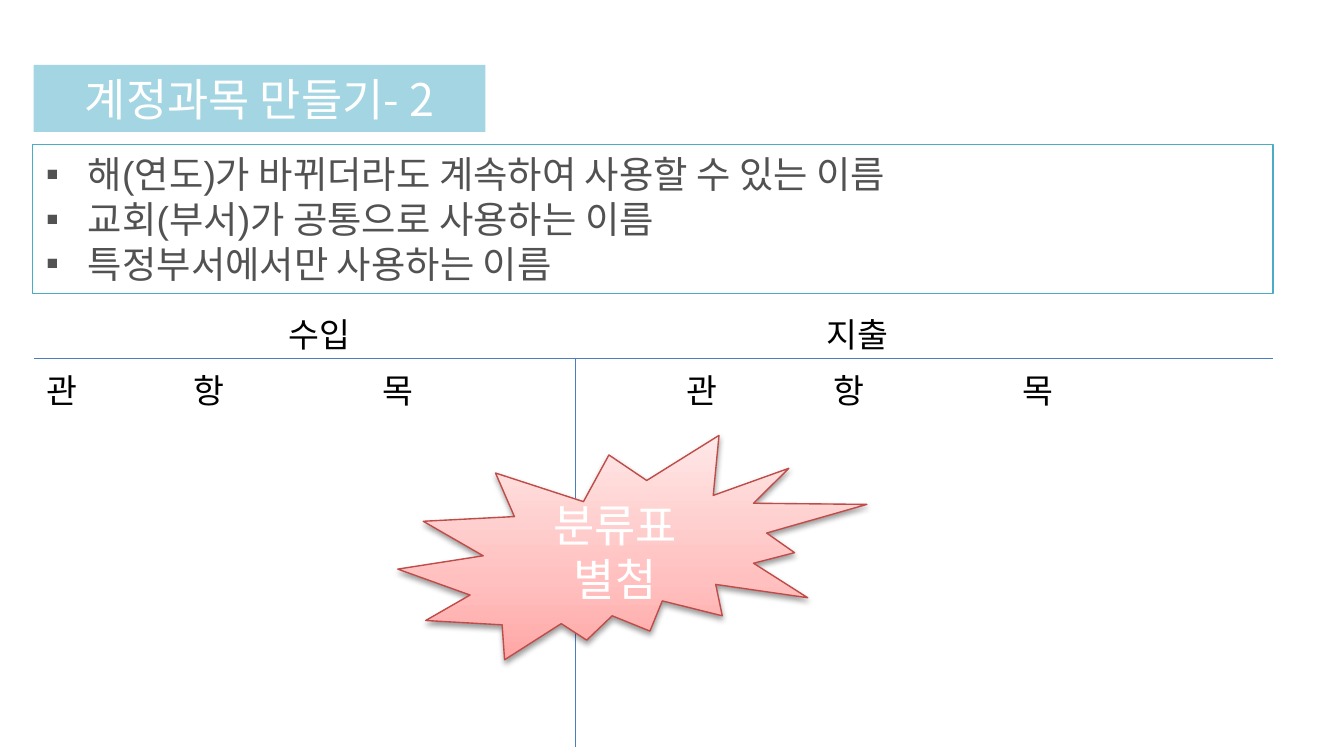
from lxml import etree
from pptx import Presentation
from pptx.dml.color import RGBColor
from pptx.enum.shapes import MSO_CONNECTOR, MSO_SHAPE
from pptx.enum.text import MSO_ANCHOR, MSO_AUTO_SIZE, PP_ALIGN
from pptx.oxml import parse_xml
from pptx.oxml.ns import nsdecls, qn
from pptx.util import Pt

# Content
TITLE = "계정과목 만들기- 2"
RULES = [
    "해(연도)가 바뀌더라도 계속하여 사용할 수 있는 이름",
    "교회(부서)가 공통으로 사용하는 이름",
    "특정부서에서만 사용하는 이름",
]
# Heading, its left edge, left edge of its first column
SIDES = [("수입", 147.6, 18), ("지출", 435.6, 360.72)]
# Column label, offset from the first column
COLUMNS = [("관", 0), ("항", 78.5), ("목", 180)]
BURST = "분류표 별첨"

# Style
KOREAN, LATIN = "Noto Sans CJK KR", "Arial"
WHITE = RGBColor(0xFF, 0xFF, 0xFF)
BLACK = RGBColor(0, 0, 0)
GRAY = RGBColor(0x52, 0x52, 0x52)
TEAL = RGBColor(0x4B, 0xAC, 0xC6)
BLUE = RGBColor(0x4B, 0x7E, 0xBC)
RED = RGBColor(0xBF, 0x4C, 0x48)
BURST_STOPS = [(0, "FFA6A5"), (35, "FFC0BF"), (100, "FFE7E7")]
LEFT, CENTER = PP_ALIGN.LEFT, PP_ALIGN.CENTER
TOP, MIDDLE = MSO_ANCHOR.TOP, MSO_ANCHOR.MIDDLE
NO_AUTOFIT = MSO_AUTO_SIZE.NONE

# Layout
LINE_LEFT, LINE_RIGHT, LINE_TOP = 18, 681.84, 192.24
DIVIDER_X, DIVIDER_BOTTOM = 308.16, 400.32
HEADING_TOP, COLUMN_TOP = 164.9, 194.4
LABEL_SIZE = (51.12, 28.8)
BULLET_INDENT = 22.5


def write_text(shape, lines, size, color, font=KOREAN, align=LEFT, anchor=TOP, bullet=None):
    frame = shape.text_frame
    frame.word_wrap = True
    frame.auto_size = NO_AUTOFIT
    frame.vertical_anchor = anchor
    frame.text = "\n".join(lines)
    for paragraph in frame.paragraphs:
        paragraph.alignment = align
        run = paragraph.runs[0]
        run.font.name = font
        run.font.size = Pt(size)
        run.font.color.rgb = color
        east_asian = etree.SubElement(run.font._element, qn("a:ea"))
        east_asian.set("typeface", KOREAN)
        if bullet:
            properties = paragraph._p.get_or_add_pPr()
            properties.set("marL", str(Pt(BULLET_INDENT)))
            properties.set("indent", str(-Pt(BULLET_INDENT)))
            etree.SubElement(properties, qn("a:buFont")).set("typeface", LATIN)
            etree.SubElement(properties, qn("a:buChar")).set("char", bullet)


def add_box(slide, kind, left, top, width, height, line_color):
    shape = slide.shapes.add_shape(kind, Pt(left), Pt(top), Pt(width), Pt(height))
    shape.shadow.inherit = False
    shape.line.color.rgb = line_color
    shape.line.width = Pt(0.75)
    return shape


def add_line(slide, x1, y1, x2, y2):
    line = slide.shapes.add_connector(MSO_CONNECTOR.STRAIGHT, Pt(x1), Pt(y1), Pt(x2), Pt(y2))
    line.line.color.rgb = BLUE
    line.line.width = Pt(0.75)
    etree.SubElement(line._element.spPr, qn("a:effectLst"))


def add_label(slide, text, left, top):
    width, height = LABEL_SIZE
    label = slide.shapes.add_textbox(Pt(left), Pt(top), Pt(width), Pt(height))
    write_text(label, [text], 18, BLACK)


def add_burst_effects(burst):
    properties = burst._element.spPr
    stops = "".join(
        f'<a:gs pos="{position * 1000}"><a:srgbClr val="{color}"/></a:gs>'
        for position, color in BURST_STOPS
    )
    gradient = parse_xml(
        f'<a:gradFill {nsdecls("a")} rotWithShape="1"><a:gsLst>{stops}</a:gsLst>'
        '<a:lin ang="16200000" scaled="1"/></a:gradFill>'
    )
    properties.find(qn("a:prstGeom")).addnext(gradient)
    shadow = parse_xml(
        f'<a:outerShdw {nsdecls("a")} blurRad="{Pt(3.1)}" dist="{Pt(1.6)}" dir="5400000" '
        'rotWithShape="0"><a:srgbClr val="000000"><a:alpha val="38000"/></a:srgbClr></a:outerShdw>'
    )
    properties.find(qn("a:effectLst")).append(shadow)


def main():
    presentation = Presentation()
    presentation.slide_width, presentation.slide_height = Pt(720), Pt(405)
    slide = presentation.slides.add_slide(presentation.slide_layouts[5])

    # Title on a half-transparent band
    title = slide.shapes.title
    title.left, title.top, title.width, title.height = Pt(18), Pt(34.7), Pt(242), Pt(36)
    title.fill.solid()
    title.fill.fore_color.rgb = TEAL
    band_color = title._element.spPr.find(qn("a:solidFill"))[0]
    etree.SubElement(band_color, qn("a:alpha")).set("val", "50000")
    write_text(title, [TITLE], 24, WHITE, align=CENTER, anchor=MIDDLE)

    # Naming rules
    rules = add_box(slide, MSO_SHAPE.RECTANGLE, 17.5, 77.4, 664.5, 79.8, TEAL)
    rules.fill.solid()
    rules.fill.fore_color.rgb = WHITE
    write_text(rules, RULES, 20, GRAY, font=LATIN, bullet="▪")

    # Ledger lines and labels
    add_line(slide, LINE_LEFT, LINE_TOP, LINE_RIGHT, LINE_TOP)
    add_line(slide, DIVIDER_X, LINE_TOP, DIVIDER_X, DIVIDER_BOTTOM)
    for heading, heading_left, first_column in SIDES:
        add_label(slide, heading, heading_left, HEADING_TOP)
        for column, offset in COLUMNS:
            add_label(slide, column, first_column + offset, COLUMN_TOP)

    # Burst
    burst = add_box(slide, MSO_SHAPE.EXPLOSION2, 213.1, 233.3, 251.3, 120.2, RED)
    add_burst_effects(burst)
    write_text(burst, [BURST], 24, WHITE, align=CENTER, anchor=MIDDLE)

    presentation.save("out.pptx")


if __name__ == "__main__":
    main()
